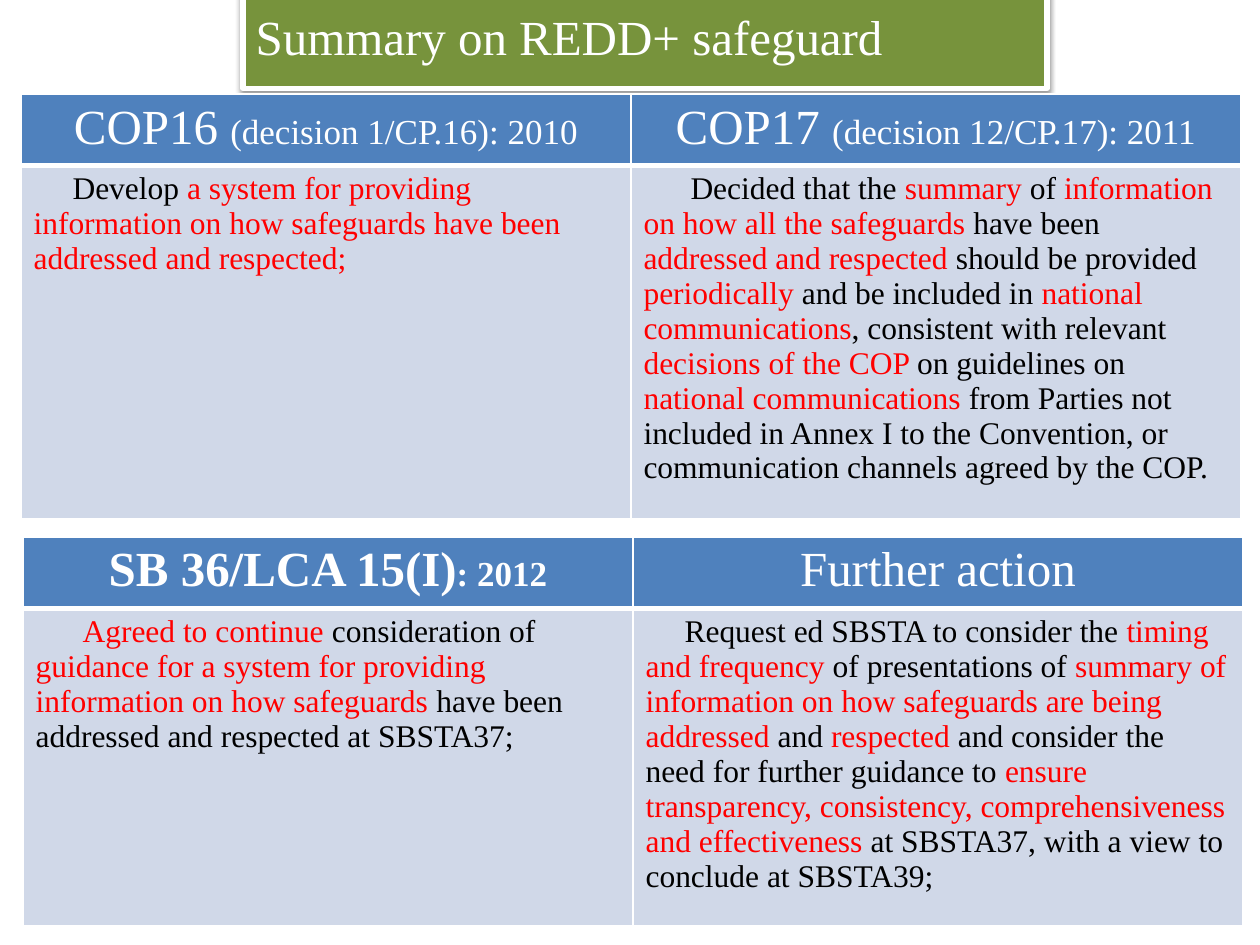
from dataclasses import dataclass

from lxml.etree import SubElement
from pptx import Presentation
from pptx.dml.color import RGBColor
from pptx.enum.text import MSO_ANCHOR, MSO_AUTO_SIZE, PP_ALIGN
from pptx.oxml.ns import qn
from pptx.util import Pt

EMU_PER_PX = 914400 / 126


def px(length):
    """Turn a length in px into EMU."""
    return round(length * EMU_PER_PX)


@dataclass(frozen=True)
class Theme:
    """Colours, font and type sizes of the deck."""
    font: str = "Times New Roman"
    white: str = "FFFFFF"
    black: str = "000000"
    highlight: str = "FF0000"
    banner: str = "77933C"
    header: str = "4F81BD"
    body: str = "D0D8E8"
    large: int = 28
    medium: int = 20
    small: int = 18
    thin: int = 1
    thick: int = 3


@dataclass
class Cell:
    """Heading and body of one column, where | switches the emphasis on and off."""
    heading: str
    text: str
    indent: int
    bold: bool = False


class SlideBuilder:
    """Draws styled elements on the current page."""

    def __init__(self, theme, page):
        """Keep the style and the page."""
        self.theme = theme
        self.page = page

    def style(self, span, size, colour, bold=False):
        """Format one run."""
        span.font.name = self.theme.font
        span.font.size = Pt(size)
        span.font.bold = bold
        span.font.color.rgb = RGBColor.from_string(colour)

    def title(self, text, left, top, width, height):
        """Turn the title placeholder into a framed banner."""
        theme = self.theme
        box = self.page.shapes.title
        box.left, box.top, box.width, box.height = map(px, (left, top, width, height))
        box.fill.solid()
        box.fill.fore_color.rgb = RGBColor.from_string(theme.banner)
        box.line.color.rgb = RGBColor.from_string(theme.white)
        box.line.width = Pt(theme.thick)
        self.shadow(box)
        frame = box.text_frame
        frame.text = text
        frame.word_wrap = True
        frame.auto_size = MSO_AUTO_SIZE.SHAPE_TO_FIT_TEXT
        frame.vertical_anchor = MSO_ANCHOR.MIDDLE
        para = frame.paragraphs[0]
        para.alignment = PP_ALIGN.LEFT
        self.style(para.runs[0], theme.large, theme.white)

    def shadow(self, box):
        """Add a soft shadow below a box."""
        effects = SubElement(box.element.spPr, qn("a:effectLst"))
        outer = SubElement(effects, qn("a:outerShdw"), blurRad=str(Pt(3.1)),
                           dist=str(Pt(1.6)), dir="5400000", rotWithShape="0")
        colour = SubElement(outer, qn("a:srgbClr"), val=self.theme.black)
        SubElement(colour, qn("a:alpha"), val="38000")

    def borders(self, cell, top, bottom):
        """Give a cell white borders."""
        widths = {"L": self.theme.thin, "R": self.theme.thin, "T": top, "B": bottom}
        properties = cell._tc.get_or_add_tcPr()
        for side, width in widths.items():
            line = SubElement(properties, qn(f"a:ln{side}"), w=str(Pt(width)))
            fill = SubElement(line, qn("a:solidFill"))
            SubElement(fill, qn("a:srgbClr"), val=self.theme.white)

    def spans(self, para, text, plain, emphasis):
        """Write text whose parts alternate between two styles."""
        for index, part in enumerate(text.split("|")):
            if part:
                span = para.add_run()
                span.text = part
                self.style(span, *(emphasis if index % 2 else plain))

    def fill(self, cell, colour):
        """Fill a cell with one colour."""
        cell.fill.solid()
        cell.fill.fore_color.rgb = RGBColor.from_string(colour)

    def table(self, columns, left, top, width, heights):
        """Add a table with a heading row and a body row."""
        theme = self.theme
        frame = self.page.shapes.add_table(2, len(columns), px(left), px(top),
                                           px(width), px(sum(heights)))
        grid = frame.table
        for row, height in zip(grid.rows, heights):
            row.height = px(height)
        for index, column in enumerate(columns):
            heading, body = grid.cell(0, index), grid.cell(1, index)
            self.borders(heading, theme.thin, theme.thick)
            self.borders(body, theme.thick, theme.thin)
            self.fill(heading, theme.header)
            self.fill(body, theme.body)
            para = heading.text_frame.paragraphs[0]
            para.alignment = PP_ALIGN.CENTER
            self.spans(para, column.heading, (theme.large, theme.white, column.bold),
                       (theme.medium, theme.white, column.bold))
            para = body.text_frame.paragraphs[0]
            properties = para._p.get_or_add_pPr()
            properties.set("marL", "0")
            properties.set("indent", str(px(column.indent)))
            self.spans(para, column.text, (theme.small, theme.black),
                       (theme.small, theme.highlight))


DECISIONS = [
    Cell("COP16 |(decision 1/CP.16): 2010",
         "Develop |a system for providing information on how safeguards have been "
         "addressed and respected;", 39),
    Cell("COP17 |(decision 12/CP.17): 2011",
         "Decided that the |summary| of |information on how all the safeguards |have been "
         "|addressed and respected |should be provided |periodically |and be included in "
         "|national communications|, consistent with relevant |decisions of the COP |on "
         "guidelines on |national communications |from Parties not included in Annex I to "
         "the Convention, or communication channels agreed by the COP.", 47),
]
NEXT_STEPS = [
    Cell("SB 36/LCA 15(I)|: 2012",
         "|Agreed to continue |consideration of |guidance for a system for providing "
         "information on how safeguards |have been addressed and respected at SBSTA37;",
         47, True),
    Cell("Further action",
         "Request ed SBSTA to consider the |timing and frequency |of presentations of "
         "|summary of information on how safeguards are being addressed |and |respected "
         "|and consider the need for further guidance to |ensure transparency, consistency, "
         "comprehensiveness and effectiveness |at SBSTA37, with a view to conclude at "
         "SBSTA39;", 39),
]


def main():
    """Build the deck and save it."""
    deck = Presentation()
    deck.slide_width, deck.slide_height = px(1260), px(945)
    page = deck.slides.add_slide(deck.slide_layouts[5])
    builder = SlideBuilder(Theme(), page)
    builder.title("Summary on REDD+ safeguard", 243, 0, 804, 72)
    builder.table(DECISIONS, 21, 94, 1220, (71, 353))
    builder.table(NEXT_STEPS, 23, 537, 1220, (71, 317))
    deck.save("out.pptx")


if __name__ == "__main__":
    main()
